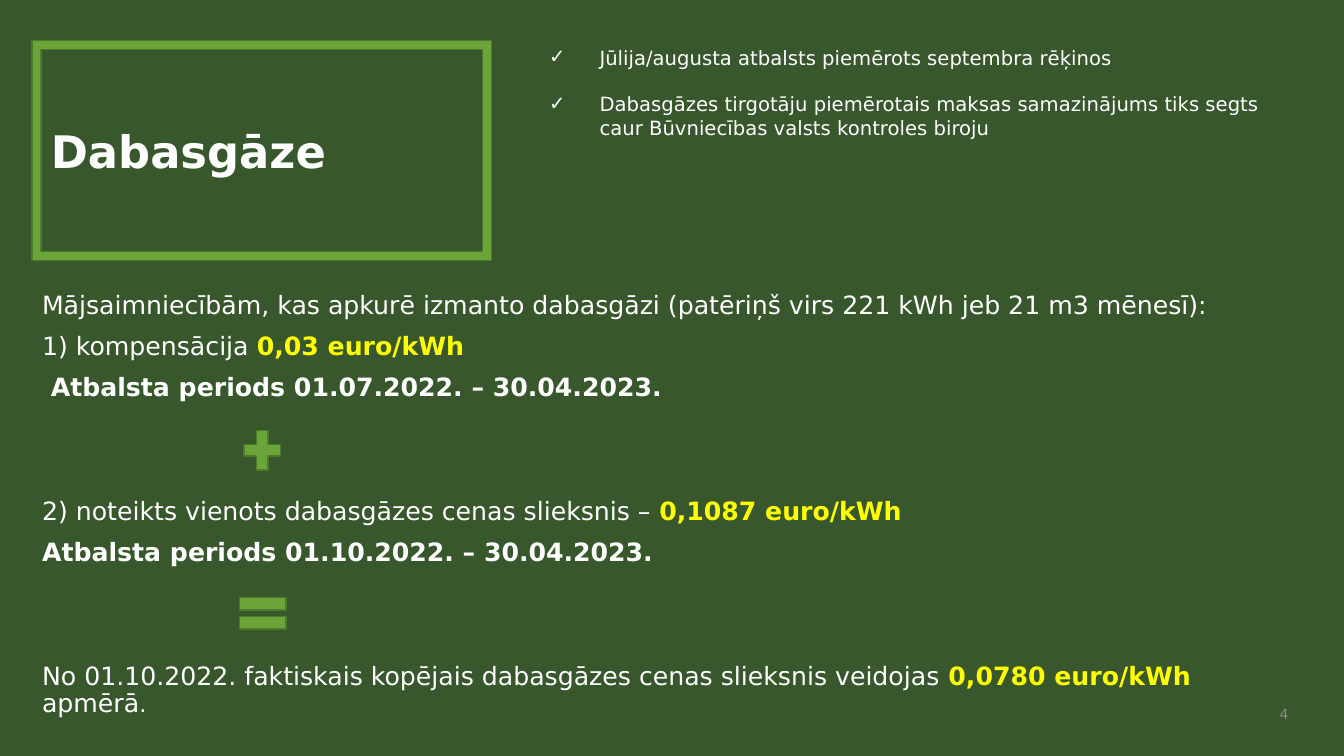
"""Build the natural gas support slide."""
from dataclasses import dataclass

from lxml import etree
from pptx import Presentation
from pptx.dml.color import RGBColor
from pptx.enum.shapes import MSO_SHAPE
from pptx.enum.text import MSO_ANCHOR, PP_ALIGN
from pptx.oxml.ns import qn
from pptx.util import Cm, Pt

FRAME, PLUS, EQUAL = MSO_SHAPE.FRAME, MSO_SHAPE.MATH_PLUS, MSO_SHAPE.MATH_EQUAL
TOP, MIDDLE = MSO_ANCHOR.TOP, MSO_ANCHOR.MIDDLE
LEFT, RIGHT = PP_ALIGN.LEFT, PP_ALIGN.RIGHT


@dataclass(frozen=True)
class Theme:
    font: str = "DejaVu Sans"
    background: RGBColor = RGBColor(0x38, 0x57, 0x2C)
    accent: RGBColor = RGBColor(0x6B, 0xA5, 0x39)
    outline: RGBColor = RGBColor(0x4F, 0x7A, 0x2A)
    text: RGBColor = RGBColor(0xFF, 0xFF, 0xFF)
    highlight: RGBColor = RGBColor(0xFF, 0xFF, 0x00)
    muted: RGBColor = RGBColor(0x8C, 0x8C, 0x8C)
    title_size: int = 32
    body_size: int = 18
    period_size: int = 16
    note_size: int = 14
    number_size: int = 10


theme = Theme()


def add_run(paragraph, text, *, size=theme.body_size, color=theme.text, bold=False):
    run = paragraph.add_run()
    run.text = text
    run.font.name = theme.font
    run.font.size = Pt(size)
    run.font.color.rgb = color
    run.font.bold = bold


def add_text_frame(slide, left, top, width, height, anchor=TOP):
    box = slide.shapes.add_textbox(Cm(left), Cm(top), Cm(width), Cm(height))
    box.text_frame.word_wrap = True
    box.text_frame.vertical_anchor = anchor
    return box.text_frame


presentation = Presentation()
presentation.slide_width = Cm(33.87)
presentation.slide_height = Cm(19.05)
slide = presentation.slides.add_slide(presentation.slide_layouts[6])
slide.background.fill.solid()
slide.background.fill.fore_color.rgb = theme.background

shapes = {}
for kind, left, top, width, height in (
    (FRAME, 0.81, 1.02, 11.58, 5.54),
    (PLUS, 5.99, 10.67, 1.24, 1.35),
    (EQUAL, 5.82, 14.78, 1.6, 1.35),
):
    shape = slide.shapes.add_shape(kind, Cm(left), Cm(top), Cm(width), Cm(height))
    shape.shadow.inherit = False
    shape.fill.solid()
    shape.fill.fore_color.rgb = theme.accent
    shape.line.color.rgb = theme.outline
    shape.line.width = Pt(1)
    shapes[kind] = shape

title_frame = shapes[FRAME]
title_frame.adjustments[0] = 0.04
title_frame.text_frame.vertical_anchor = MIDDLE
title = title_frame.text_frame.paragraphs[0]
title.alignment = LEFT
add_run(title, "Dabasgāze", size=theme.title_size, bold=True)

notes = add_text_frame(slide, 13.59, 1.02, 19.46, 2.64)
for index, note in enumerate((
    "Jūlija/augusta atbalsts piemērots septembra rēķinos",
    "Dabasgāzes tirgotāju piemērotais maksas samazinājums tiks segts "
    "caur Būvniecības valsts kontroles biroju",
)):
    paragraph = notes.add_paragraph() if index else notes.paragraphs[0]
    paragraph.space_before = Pt(16.5 * index)
    add_run(paragraph, note, size=theme.note_size)
    properties = paragraph._p.get_or_add_pPr()
    properties.set("marL", str(Cm(1.27)))
    properties.set("indent", str(-Cm(1.27)))
    etree.SubElement(properties, qn("a:buFont")).set("typeface", theme.font)
    etree.SubElement(properties, qn("a:buChar")).set("char", "✓")

plain = {}
strong = {"bold": True}
rate = {"bold": True, "color": theme.highlight}
line_gap, symbol_gap = 10, 69
body_paragraphs = (
    (line_gap, [("Mājsaimniecībām, kas apkurē izmanto dabasgāzi "
                 "(patēriņš virs 221 kWh jeb 21 m3 mēnesī):", plain)]),
    (line_gap, [("1) kompensācija ", plain), ("0,03 euro/kWh", rate)]),
    (line_gap, [(" Atbalsta periods 01.07.2022. – 30.04.2023.", strong)]),
    (symbol_gap, [("2) noteikts vienots dabasgāzes cenas slieksnis – ", plain),
                  ("0,1087 euro/kWh", rate)]),
    (line_gap, [("Atbalsta periods 01.10.2022. – 30.04.2023.", strong)]),
    (symbol_gap, [("No 01.10.2022. faktiskais kopējais dabasgāzes cenas "
                   "slieksnis veidojas ", plain),
                  ("0,0780 euro/kWh ", rate), ("apmērā", plain),
                  (".", {"size": theme.period_size})]),
)
body = add_text_frame(slide, 0.81, 7.24, 31.37, 10.74)
for index, (gap, runs) in enumerate(body_paragraphs):
    paragraph = body.add_paragraph() if index else body.paragraphs[0]
    paragraph.line_spacing = 0.9
    paragraph.space_before = Pt(gap)
    for text, style in runs:
        add_run(paragraph, text, **style)

page_number = add_text_frame(slide, 31.6, 17.58, 1.12, 0.84, MIDDLE).paragraphs[0]
page_number.alignment = RIGHT
add_run(page_number, "4", size=theme.number_size, color=theme.muted)

presentation.save("out.pptx")
